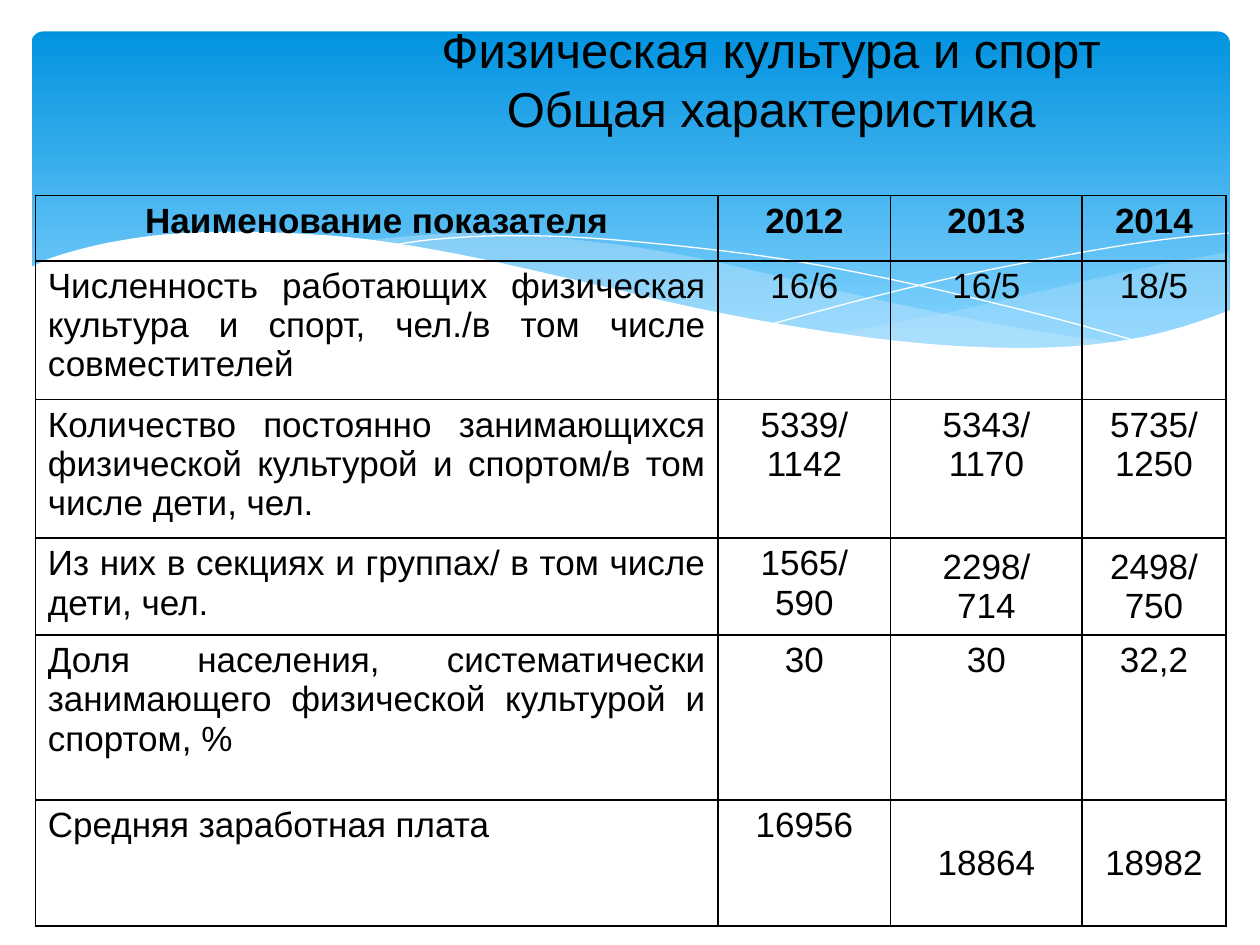
from dataclasses import dataclass

from pptx import Presentation
from pptx.dml.color import RGBColor
from pptx.enum.shapes import MSO_SHAPE
from pptx.enum.text import MSO_ANCHOR, MSO_AUTO_SIZE, PP_ALIGN
from pptx.oxml import parse_xml
from pptx.oxml.ns import nsdecls, qn
from pptx.util import Inches, Pt


@dataclass(frozen=True)
class Theme:
    font: str = "Arial"
    ink: RGBColor = RGBColor(0, 0, 0)
    paper: RGBColor = RGBColor(255, 255, 255)
    deep: RGBColor = RGBColor.from_string("0293E0")
    sky: RGBColor = RGBColor.from_string("83D3FE")
    mist: RGBColor = RGBColor.from_string("C6E7FC")
    title: Pt = Pt(28)
    body: Pt = Pt(20)
    rule: Pt = Pt(1)


THEME = Theme()

# Wave curves, in inches from the top left of the wave band
RIGHT_TOP = [(9.52, .16), (8.98, .26), (8.38, .39), (7.3, .64), (6.38, .81)]
RIGHT_LOW = [(6.38, .81), (6.82, .87), (7.34, .92), (7.8, .94), (8.31, .92),
             (8.82, .85), (9.19, .75), (9.53, .63)]
MID_TOP = [(8.7, .89), (7.84, .76), (6.83, .56), (6.06, .38), (5.32, .21),
           (4.66, .1), (3.97, .03), (3.38, .01), (2.63, .07)]
MID_LOW = [(2.63, .07), (3.39, .19), (4.26, .38), (5.07, .56), (5.78, .71),
           (6.42, .82), (6.99, .9), (7.62, .94), (8.15, .94), (8.7, .89)]
FALL = [(2.86, .11), (3.21, .06), (3.78, .03), (4.46, .05), (5.33, .13),
        (6.13, .24), (7.04, .42), (8.08, .67), (8.84, .88)]
RISE = [(5.9, .73), (6.72, .51), (7.53, .32), (8.43, .15), (9.01, .06),
        (9.52, .01)]
CREST = [(9.54, .62), (9.17, .75), (8.76, .85), (8.27, .91), (7.7, .92),
         (7.03, .88), (6.25, .78), (5.32, .61), (4.24, .36), (3.42, .18),
         (2.69, .06), (2.07, .01), (1.54, 0), (1.09, .02), (.72, .07),
         (.44, .13), (.17, .21), (0, .29)]
FLOOR = [(0, 1.45), (9.54, 1.45)]

COLS = [5.42, 1.37, 1.52, 1.14]
ROWS = [
    (0.52, "Наименование показателя", "2012", "2013", "2014"),
    (1.1, "Численность работающих физическая культура и спорт, "
          "чел./в том числе совместителей", "16/6", "16/5", "18/5"),
    (1.1, "Количество постоянно занимающихся физической культурой и "
          "спортом/в том числе дети, чел.",
     "5339/\n1142", "5343/\n1170", "5735/\n1250"),
    (0.77, "Из них в секциях и группах/ в том числе дети, чел.",
     "1565/\n590", "2298/\n714", "2498/\n750"),
    (1.31, "Доля населения, систематически занимающего физической "
           "культурой и спортом, %", "30", "30", "32,2"),
    (1, "Средняя заработная плата", "16956", "18864", "18982"),
]
MIDDLE = {(3, 2), (3, 3), (5, 2), (5, 3)}


def smooth(knots, steps=4):
    """Points of a Catmull-Rom curve through the knots."""
    ends = [knots[0], *knots, knots[-1]]
    curve = []
    for a, b, c, d in zip(ends, ends[1:], ends[2:], ends[3:]):
        for t in (step / steps for step in range(steps)):
            curve.append(tuple(
                (2 * q + (r - p) * t + (2 * p - 5 * q + 4 * r - s) * t ** 2
                 + (3 * q - p - 3 * r + s) * t ** 3) / 2
                for p, q, r, s in zip(a, b, c, d)))
    return curve + [knots[-1]]


def draw(slide, left, top, points, close):
    spots = [(Inches(left + x), Inches(top + y)) for x, y in points]
    pen = slide.shapes.build_freeform(*spots[0])
    pen.add_line_segments(spots[1:], close=close)
    shape = pen.convert_to_shape()
    shape.shadow.inherit = False
    return shape


def add_area(slide, left, top, points, color, alpha=100):
    area = draw(slide, left, top, points, True)
    area.line.fill.background()
    area.fill.solid()
    area.fill.fore_color.rgb = color
    if alpha < 100:
        tint = area.fill._xPr.find(qn("a:solidFill"))[0]
        tint.append(parse_xml(
            f'<a:alpha {nsdecls("a")} val="{alpha * 1000}"/>'))


def add_waves(slide, left, top):
    add_area(slide, left, top, smooth(RIGHT_TOP) + smooth(RIGHT_LOW),
             THEME.mist, 29)
    add_area(slide, left, top, smooth(MID_TOP) + smooth(MID_LOW),
             THEME.mist, 40)
    for knots in (FALL, RISE):
        curve = draw(slide, left, top, smooth(knots), False)
        curve.fill.background()
        curve.line.color.rgb = THEME.paper
        curve.line.width = Pt(0)
    add_area(slide, left, top, smooth(CREST) + FLOOR, THEME.paper)


def add_panel(slide, left, top, width, height):
    panel = slide.shapes.add_shape(
        MSO_SHAPE.ROUNDED_RECTANGLE,
        Inches(left), Inches(top), Inches(width), Inches(height))
    panel.adjustments[0] = 0.034
    panel.shadow.inherit = False
    panel.line.fill.background()
    panel.fill.gradient()
    panel.fill.gradient_angle = 270
    stops = panel.fill.gradient_stops
    for stop, spot, color in zip(stops, (0, 0.9), (THEME.deep, THEME.sky)):
        stop.position = spot
        stop.color.rgb = color


def style(frame, size, align, bold=False):
    for para in frame.paragraphs:
        para.alignment = align
        para.font.name = THEME.font
        para.font.size = size
        para.font.bold = bold
        para.font.color.rgb = THEME.ink


def add_title(slide, left, top, width, height):
    title = slide.shapes.title
    title.left, title.top = Inches(left), Inches(top)
    title.width, title.height = Inches(width), Inches(height)
    frame = title.text_frame
    frame.text = "Физическая культура и спорт\vОбщая характеристика"
    frame.auto_size = MSO_AUTO_SIZE.NONE
    frame.vertical_anchor = MSO_ANCHOR.MIDDLE
    style(frame, THEME.title, PP_ALIGN.CENTER)
    slide.shapes._spTree.append(title._element)  # bring to front


def add_border(cell):
    props = cell._tc.get_or_add_tcPr()
    for spot, side in enumerate(("lnL", "lnR", "lnT", "lnB")):
        props.insert(spot, parse_xml(
            f'<a:{side} {nsdecls("a")} w="{THEME.rule}"><a:solidFill>'
            f'<a:srgbClr val="{THEME.ink}"/></a:solidFill></a:{side}>'))


def fill_cell(cell, text, row, col):
    cell.text = text
    cell.fill.background()
    add_border(cell)
    if (row, col) in MIDDLE:
        cell.vertical_anchor = MSO_ANCHOR.MIDDLE
        cell.margin_left = cell.margin_right = Inches(0.05)
        cell.margin_top = cell.margin_bottom = 0
    label = row > 0 and col == 0
    align = PP_ALIGN.JUSTIFY if label else PP_ALIGN.CENTER
    style(cell.text_frame, THEME.body, align, row == 0)


def add_grid(slide, left, top):
    high = sum(row[0] for row in ROWS)
    table = slide.shapes.add_table(
        len(ROWS), len(COLS), Inches(left), Inches(top),
        Inches(sum(COLS)), Inches(high)).table
    table.first_row = table.horz_banding = False
    for col, width in zip(table.columns, COLS):
        col.width = Inches(width)
    for i, (height, *texts) in enumerate(ROWS):
        table.rows[i].height = Inches(height)
        for j, text in enumerate(texts):
            fill_cell(table.cell(i, j), text, i, j)


def main():
    deck = Presentation()
    deck.slide_width, deck.slide_height = Inches(10), Inches(7.5)
    slide = deck.slides.add_slide(deck.slide_layouts[5])
    add_panel(slide, 0.25, 0.25, 9.51, 2.7)
    add_waves(slide, 0.23, 1.84)
    add_grid(slide, 0.28, 1.55)
    add_title(slide, 2.24, 0, 7.76, 1.25)
    deck.save("out.pptx")


if __name__ == "__main__":
    main()
